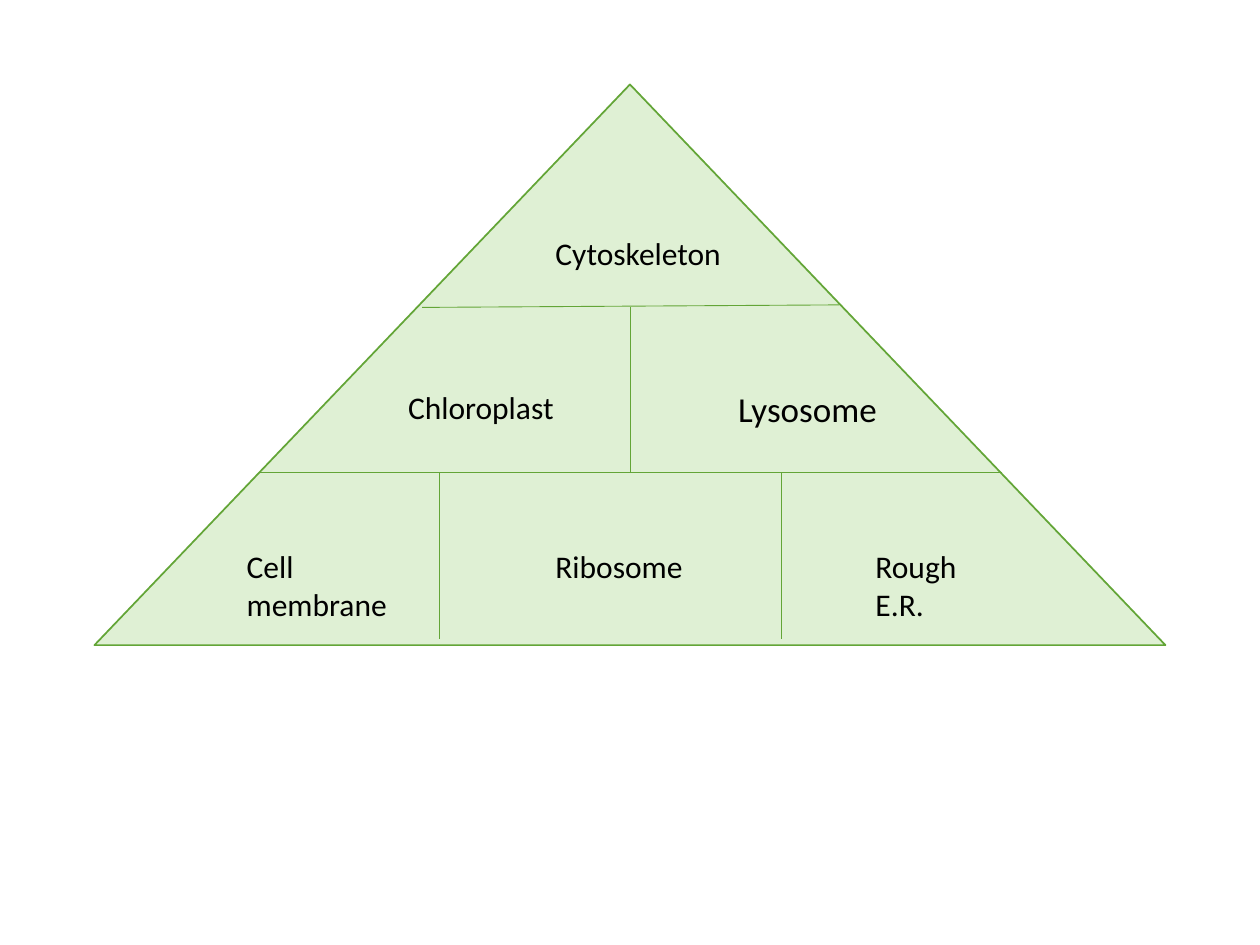
from lxml import etree
from pptx import Presentation
from pptx.dml.color import RGBColor
from pptx.enum import shapes, text
from pptx.oxml import ns
from pptx.util import Inches, Pt


def color(value):
    return RGBColor.from_string(value)


class PyramidSlide:
    FONT = "Calibri"
    INK = "000000"
    FILL = "DFF0D4"
    EDGE = "63A537"

    def __init__(self, slide):
        self.slide = slide

    def triangle(self, left, top, width, height):
        s = self.slide.shapes.add_shape(
            shapes.MSO_SHAPE.ISOSCELES_TRIANGLE,
            Inches(left), Inches(top), Inches(width), Inches(height))
        s.shadow.inherit = False
        s.fill.solid()
        s.fill.fore_color.rgb = color(self.FILL)
        s.line.color.rgb = color(self.EDGE)
        s.line.width = Pt(1)

    def divider(self, x1, y1, x2, y2):
        s = self.slide.shapes.add_connector(
            shapes.MSO_CONNECTOR.STRAIGHT,
            Inches(x1), Inches(y1), Inches(x2), Inches(y2))
        s.line.color.rgb = color(self.EDGE)
        s.line.width = Pt(0.5)
        etree.SubElement(s._element.spPr, ns.qn("a:effectLst"))

    def label(self, words, left, top, width, height=0.4, size=18):
        s = self.slide.shapes.add_textbox(
            Inches(left), Inches(top), Inches(width), Inches(height))
        tf = s.text_frame
        tf.word_wrap = True
        tf.auto_size = text.MSO_AUTO_SIZE.SHAPE_TO_FIT_TEXT
        tf.text = words
        r = tf.paragraphs[0].runs[0]
        r.font.name = self.FONT
        r.font.size = Pt(size)
        r.font.color.rgb = color(self.INK)


def main():
    prs = Presentation()
    prs.slide_width = Inches(10)
    prs.slide_height = Inches(7.5)
    pyramid = PyramidSlide(prs.slides.add_slide(prs.slide_layouts[6]))

    upper, lower, base = 2.44, 3.75, 5.07
    middle_row, bottom_row = 3.03, 4.29

    pyramid.triangle(0.75, 0.67, 8.5, 4.45)
    pyramid.divider(3.35, upper, 6.66, 2.42)
    pyramid.divider(2.06, lower, 7.95, lower)
    pyramid.divider(5, upper, 5, lower)
    for x in (3.49, 6.2):
        pyramid.divider(x, lower, x, base)

    pyramid.label("Cytoskeleton", 4.31, 1.81, 1.56)
    pyramid.label("Chloroplast", 3.14, middle_row, 1.52)
    pyramid.label("Lysosome", 5.76, middle_row, 1.77, 0.44, size=20)
    pyramid.label("Cell membrane", 1.86, bottom_row, 1.7, 0.71)
    pyramid.label("Ribosome", 4.31, bottom_row, 1.74)
    pyramid.label("Rough E.R.", 6.85, bottom_row, 1.1, 0.71)

    prs.save("out.pptx")


if __name__ == "__main__":
    main()
